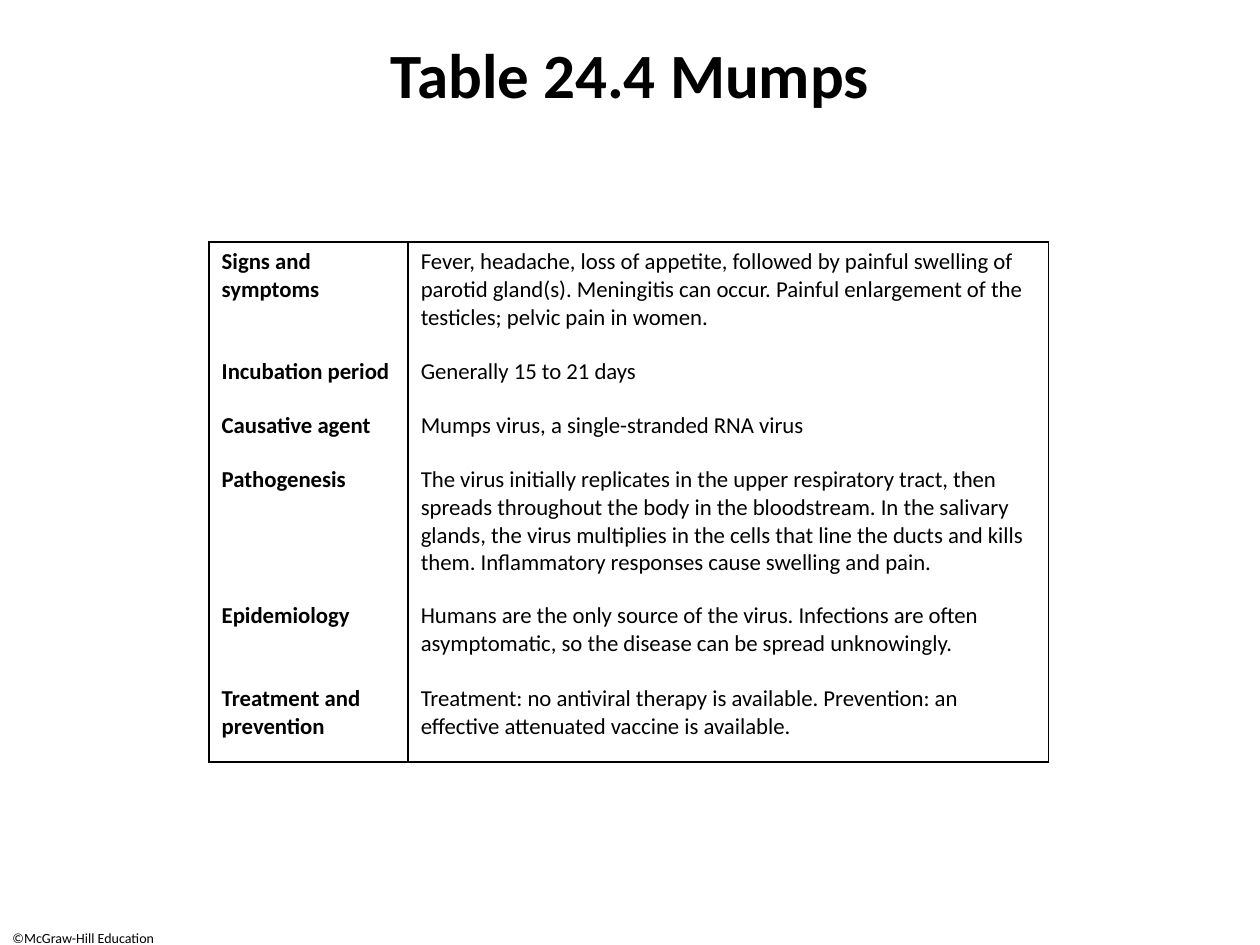
from pptx import Presentation
from pptx.dml.color import RGBColor
from pptx.enum.text import MSO_ANCHOR as Anchor, PP_ALIGN as Align
from pptx.oxml.ns import qn
from pptx.util import Inches, Pt
from lxml.etree import SubElement as Sub

BLACK = RGBColor(0, 0, 0)
FONT = "Calibri"
COLS = [1.58, 5.08]
ROWS = [
    (0.87, "Signs and symptoms",
     "Fever, headache, loss of appetite, followed by painful swelling of "
     "parotid gland(s). Meningitis can occur. Painful enlargement of the "
     "testicles; pelvic pain in women."),
    (0.43, "Incubation period", "Generally 15 to 21 days"),
    (0.43, "Causative agent", "Mumps virus, a single-stranded RNA virus"),
    (1.08, "Pathogenesis",
     "The virus initially replicates in the upper respiratory tract, then "
     "spreads throughout the body in the bloodstream. In the salivary "
     "glands, the virus multiplies in the cells that line the ducts and "
     "kills them. Inflammatory responses cause swelling and pain."),
    (0.66, "Epidemiology",
     "Humans are the only source of the virus. Infections are often "
     "asymptomatic, so the disease can be spread unknowingly."),
    (0.66, "Treatment and prevention",
     "Treatment: no antiviral therapy is available. Prevention: an "
     "effective attenuated vaccine is available."),
]


def put_text(frame, text, size, bold=False, align=Align.LEFT):
    """Fill a text frame with one styled paragraph."""
    frame.text = text
    frame.word_wrap = True
    para = frame.paragraphs[0]
    para.alignment = align
    font = para.runs[0].font
    font.name, font.size, font.bold = FONT, Pt(size), bold
    font.color.rgb = BLACK


def add_text(slide, box, text, size, bold=False, align=Align.LEFT,
             anchor=Anchor.TOP):
    """Add a text box at left, top, width, height in inches."""
    frame = slide.shapes.add_textbox(*map(Inches, box)).text_frame
    put_text(frame, text, size, bold, align)
    frame.vertical_anchor = anchor


def set_edges(cell, shown):
    """Draw the named cell edges and hide the others."""
    props = cell._tc.get_or_add_tcPr()
    for side in "LRTB":
        line = Sub(props, qn(f"a:ln{side}"), w=str(Pt(1)))
        if side in shown:
            fill = Sub(line, qn("a:solidFill"))
            Sub(fill, qn("a:srgbClr"), val=str(BLACK))
        else:
            Sub(line, qn("a:noFill"))


def add_grid(slide, left, top):
    """Add the disease table with vertical rules and an outer frame."""
    high = sum(row[0] for row in ROWS)
    table = slide.shapes.add_table(
        len(ROWS), len(COLS), Inches(left), Inches(top),
        Inches(sum(COLS)), Inches(high)).table
    table.first_row = table.horz_banding = False
    for col, width in zip(table.columns, COLS):
        col.width = Inches(width)
    last = len(ROWS) - 1
    for r, (height, *texts) in enumerate(ROWS):
        table.rows[r].height = Inches(height)
        edges = "LR" + "T" * (r == 0) + "B" * (r == last)
        for c, text in enumerate(texts):
            cell = table.cell(r, c)
            put_text(cell.text_frame, text, 13, bold=c == 0)
            set_edges(cell, edges)
            cell.fill.background()


def main():
    """Build and save the slide."""
    deck = Presentation()
    deck.slide_width, deck.slide_height = Inches(10), Inches(7.5)
    slide = deck.slides.add_slide(deck.slide_layouts[6])
    add_text(slide, (0, 7.33, 1.5, 0.17), "©McGraw-Hill Education", 8)
    add_text(slide, (0, 0.25, 10, 0.67), "Table 24.4 Mumps", 36, True,
             Align.CENTER, Anchor.MIDDLE)
    add_grid(slide, 1.66, 1.92)
    deck.save("out.pptx")


if __name__ == "__main__":
    main()
